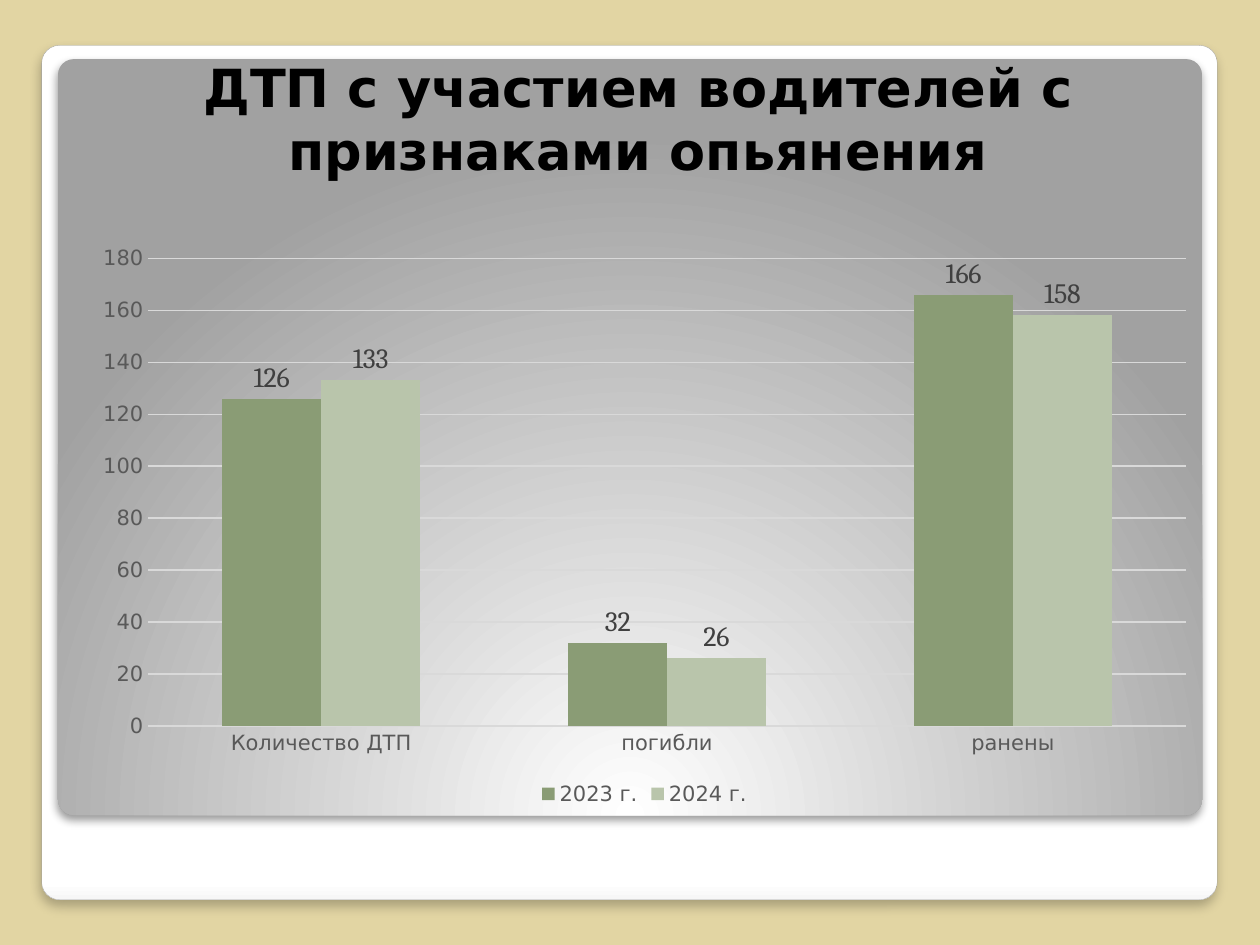
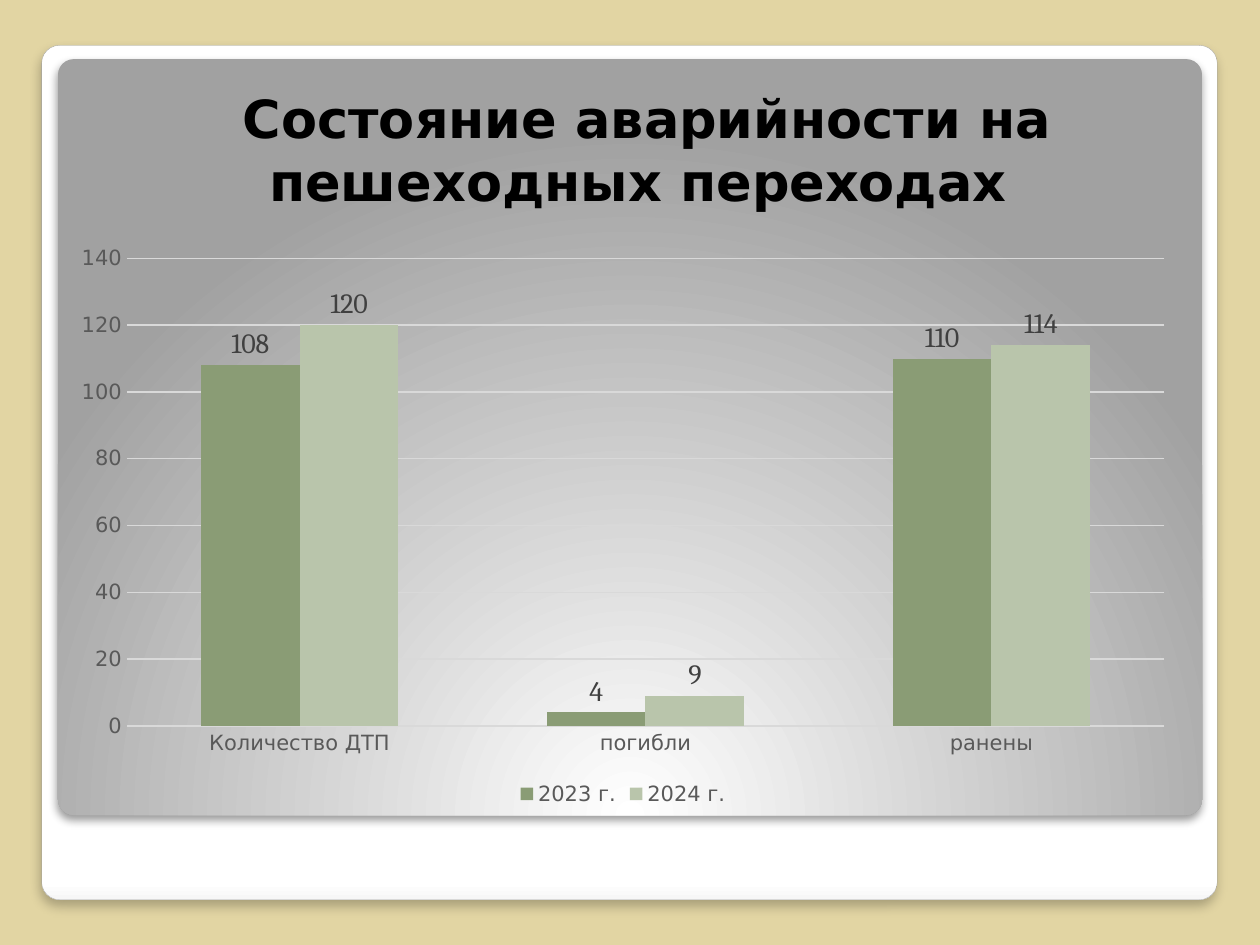
from lxml import etree
from pptx import Presentation
from pptx.chart.data import CategoryChartData
from pptx.dml.color import RGBColor
from pptx.enum.chart import XL_CHART_TYPE, XL_LABEL_POSITION, XL_LEGEND_POSITION, XL_TICK_MARK
from pptx.enum.shapes import MSO_SHAPE
from pptx.enum.text import MSO_ANCHOR, MSO_AUTO_SIZE, PP_ALIGN
from pptx.oxml.ns import qn
from pptx.util import Pt

COLUMNS = XL_CHART_TYPE.COLUMN_CLUSTERED
LABEL_ABOVE = XL_LABEL_POSITION.OUTSIDE_END
LEGEND_BOTTOM = XL_LEGEND_POSITION.BOTTOM
NO_TICK = XL_TICK_MARK.NONE
ROUNDED = MSO_SHAPE.ROUNDED_RECTANGLE
BOTTOM = MSO_ANCHOR.BOTTOM
NO_AUTO_SIZE = MSO_AUTO_SIZE.NONE
CENTER = PP_ALIGN.CENTER

CATEGORIES = ["Количество ДТП", "погибли", "ранены"]
YEARS = [("2023 г.", "8A9C75"), ("2024 г.", "B9C5AB")]
SLIDES = [
    {
        "title": "ДТП с участием водителей с признаками опьянения",
        "title_top": 39.6,
        "chart_left": 46.1,
        "values": [(126, 32, 166), (133, 26, 158)],
    },
    {
        "title": " Состояние аварийности на пешеходных переходах",
        "title_top": 56.9,
        "chart_left": 33.8,
        "values": [(108, 4, 110), (120, 9, 114)],
    },
]

SLIDE_WIDTH, SLIDE_HEIGHT = 720, 540
TITLE_LEFT, CONTENT_WIDTH, TITLE_HEIGHT = 42.5, 644.4, 67.7
CHART_TOP, CHART_HEIGHT = 133.9, 329.8
CORNER = 0.021
MAIN_FONT, LABEL_FONT, CHART_FONT = "DejaVu Sans", "Cambria", "Arial"
BACKGROUND, BLACK = "E2D5A3", "000000"
AXIS_TEXT, LABEL_TEXT, GRID = "595959", "404040", "D9D9D9"

# Stops are (percent, colour); shadow is (opacity percent, blur, distance).
PANELS = [
    {
        "box": (23.8, 25.9, 671.8, 488.2),
        "stops": [(98, "FFFFFF"), (100, "F7F7F7")],
        "radial": False,
        "line": "A4A4A3",
        "shadow": (25, 6, 4),
    },
    {
        "box": (33.1, 33.8, 653.8, 432),
        "stops": [(0, "FFFFFF"), (100, "A1A1A1")],
        "radial": True,
        "line": None,
        "shadow": (40, 5.2, 3),
    },
]


def rgb(color):
    return RGBColor.from_string(color)


def add_xml(parent, tag, **attributes):
    values = {name: str(value) for name, value in attributes.items()}
    return etree.SubElement(parent, qn(tag), values)


def set_gradient(shape, stops, radial):
    """Fill with a vertical gradient, or one radiating from the bottom centre."""
    properties = shape.element.spPr
    gradient = add_xml(properties, "a:gradFill", rotWithShape=1)
    stop_list = add_xml(gradient, "a:gsLst")
    for percent, color in stops:
        stop = add_xml(stop_list, "a:gs", pos=percent * 1000)
        add_xml(stop, "a:srgbClr", val=color)
    if radial:
        circle = add_xml(gradient, "a:path", path="circle")
        add_xml(circle, "a:fillToRect", l=50000, t=150000, r=50000, b=-50000)
    else:
        add_xml(gradient, "a:lin", ang=5400000, scaled=0)
    properties.find(qn("a:prstGeom")).addnext(gradient)


def set_shadow(shape, opacity, blur, distance):
    shape.shadow.inherit = False
    effects = shape.element.spPr.find(qn("a:effectLst"))
    shadow = add_xml(effects, "a:outerShdw", blurRad=int(Pt(blur)), dist=int(Pt(distance)),
                     dir=5400000, algn="t", rotWithShape=0)
    color = add_xml(shadow, "a:srgbClr", val=BLACK)
    add_xml(color, "a:alpha", val=opacity * 1000)


def add_panel(slide, panel):
    shape = slide.shapes.add_shape(ROUNDED, *map(Pt, panel["box"]))
    shape.adjustments[0] = CORNER
    if panel["line"]:
        shape.line.color.rgb = rgb(panel["line"])
        shape.line.width = Pt(0.17)
    else:
        shape.line.fill.background()
    set_gradient(shape, panel["stops"], panel["radial"])
    set_shadow(shape, *panel["shadow"])
    return shape


def move_panels_to_layout(slide):
    """Draw the panels once and place them behind everything on the layout."""
    layout = slide.slide_layout
    for placeholder in list(layout.placeholders):
        if placeholder.placeholder_format.idx != 0:
            placeholder.element.getparent().remove(placeholder.element)
    title = next(iter(layout.placeholders))
    for panel in PANELS:
        title.element.addprevious(add_panel(slide, panel).element)


def set_font(font, name, size, color, bold=False):
    font.name = name
    font.size = Pt(size)
    font.color.rgb = rgb(color)
    font.bold = bold


def set_title(slide, text, top):
    title = slide.shapes.title
    title.left, title.top = Pt(TITLE_LEFT), Pt(top)
    title.width, title.height = Pt(CONTENT_WIDTH), Pt(TITLE_HEIGHT)
    frame = title.text_frame
    frame.word_wrap = True
    frame.auto_size = NO_AUTO_SIZE
    frame.vertical_anchor = BOTTOM
    paragraph = frame.paragraphs[0]
    paragraph.alignment = CENTER
    run = paragraph.add_run()
    run.text = text
    set_font(run.font, MAIN_FONT, 30, BLACK, bold=True)


def add_accident_chart(slide, left, values):
    data = CategoryChartData()
    data.categories = CATEGORIES
    for (year, _), year_values in zip(YEARS, values):
        data.add_series(year, year_values)
    chart = slide.shapes.add_chart(COLUMNS, Pt(left), Pt(CHART_TOP), Pt(CONTENT_WIDTH),
                                   Pt(CHART_HEIGHT), data).chart
    chart.has_title = False
    set_font(chart.font, CHART_FONT, 10, BLACK)

    chart.has_legend = True
    chart.legend.position = LEGEND_BOTTOM
    chart.legend.include_in_layout = False
    set_font(chart.legend.font, MAIN_FONT, 12, AXIS_TEXT)

    for axis in (chart.category_axis, chart.value_axis):
        axis.major_tick_mark = axis.minor_tick_mark = NO_TICK
        axis.format.line.fill.background()
        set_font(axis.tick_labels.font, MAIN_FONT, 12, AXIS_TEXT)
    chart.value_axis.has_major_gridlines = True
    grid_line = chart.value_axis.major_gridlines.format.line
    grid_line.color.rgb = rgb(GRID)
    grid_line.width = Pt(0.75)

    plot = chart.plots[0]
    plot.gap_width = 150
    plot.overlap = 0
    plot.vary_by_categories = False
    for series, (_, color) in zip(plot.series, YEARS):
        series.format.fill.solid()
        series.format.fill.fore_color.rgb = rgb(color)
        labels = series.data_labels
        labels.show_value = True
        labels.position = LABEL_ABOVE
        set_font(labels.font, LABEL_FONT, 16, LABEL_TEXT)


def main():
    presentation = Presentation()
    presentation.slide_width = Pt(SLIDE_WIDTH)
    presentation.slide_height = Pt(SLIDE_HEIGHT)
    layout = presentation.slide_layouts.get_by_name("Title Only")
    layout.background.fill.solid()
    layout.background.fill.fore_color.rgb = rgb(BACKGROUND)
    for number, content in enumerate(SLIDES):
        slide = presentation.slides.add_slide(layout)
        if number == 0:
            move_panels_to_layout(slide)
        set_title(slide, content["title"], content["title_top"])
        add_accident_chart(slide, content["chart_left"], content["values"])
    presentation.save("out.pptx")


if __name__ == "__main__":
    main()
